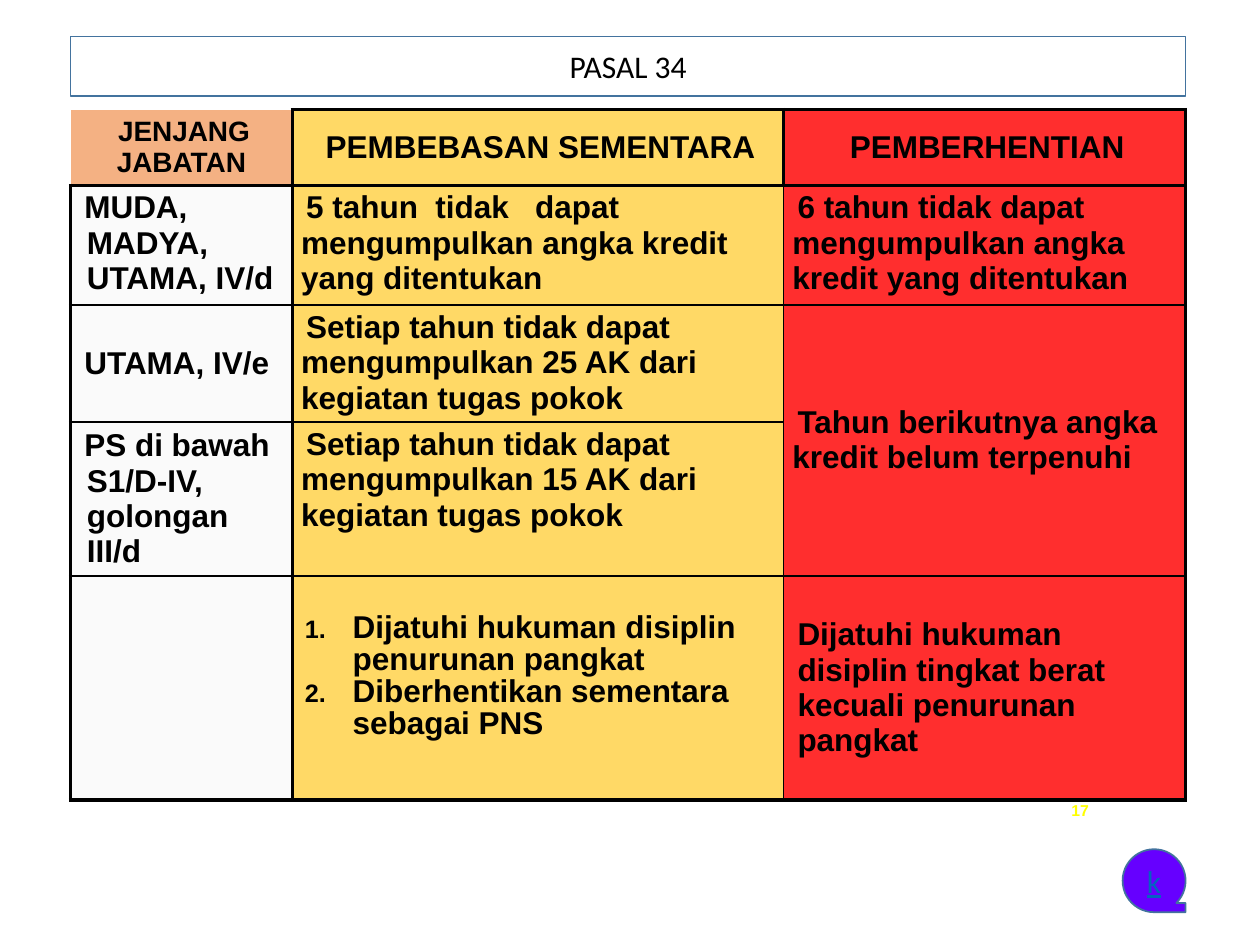
import pptx
import pptx.util
import pptx.dml.color
import pptx.enum.shapes
import pptx.enum.text
import pptx.oxml.ns
import lxml.etree

Inches, Pt = pptx.util.Inches, pptx.util.Pt
ALIGN = pptx.enum.text.PP_ALIGN
ANCHOR = pptx.enum.text.MSO_ANCHOR
SHAPES = pptx.enum.shapes.MSO_SHAPE
rgb = pptx.dml.color.RGBColor.from_string
qn = pptx.oxml.ns.qn

COLORS = {
    "text": "000000", "white": "FFFFFF", "outline": "43739E", "header": "F4B183",
    "level": "FAFAFA", "suspension": "FFD966", "dismissal": "FF0000",
    "number": "FFFF00", "tape": "6600FF", "letter": "0563C1",
}
THICK, THIN = 2.25, 1


def write(frame, *lines, size=18, font="Arial", bold=True, color="text", underline=None,
          align=ALIGN.LEFT, left=0, indent=0, spacing=None, numbered=False):
    """Write each line as a paragraph; left and indent are in inches."""
    for index, line in enumerate(lines):
        paragraph = frame.paragraphs[0] if index == 0 else frame.add_paragraph()
        paragraph.alignment = align
        if spacing:
            paragraph.line_spacing = spacing
        properties = paragraph._p.get_or_add_pPr()
        properties.set("marL", str(Inches(left)))
        properties.set("indent", str(Inches(indent)))
        if numbered:
            lxml.etree.SubElement(properties, qn("a:buSzPct"), val="80000")
            lxml.etree.SubElement(properties, qn("a:buAutoNum"), type="arabicPeriod")
        run = paragraph.add_run()
        run.text = line
        run.font.size, run.font.name = Pt(size), font
        run.font.bold, run.font.underline = bold, underline
        run.font.color.rgb = rgb(COLORS[color])


def set_borders(cell, widths):
    """Set left, right, top and bottom border widths in points; 0 means none."""
    properties = cell._tc.get_or_add_tcPr()
    for position, (side, width) in enumerate(zip("LRTB", widths)):
        border = lxml.etree.Element(qn(f"a:ln{side}"), w=str(Pt(width)))
        properties.insert(position, border)
        if width:
            fill = lxml.etree.SubElement(border, qn("a:solidFill"))
            lxml.etree.SubElement(fill, qn("a:srgbClr"), val=COLORS["text"])
        else:
            lxml.etree.SubElement(border, qn("a:noFill"))


presentation = pptx.Presentation()
presentation.slide_width, presentation.slide_height = Inches(10), Inches(7.5)
slide = presentation.slides.add_slide(presentation.slide_layouts[5])

# Grid
column_widths = [1.76, 3.9, 3.19]
row_heights = [0.6, 0.95, 0.93, 1.22, 1.78]
left, top, width = 0.56, 0.87, sum(column_widths)

# Title
title = slide.shapes.title
title.left, title.top = Inches(left), Inches(0.29)
title.width, title.height = Inches(width), Inches(0.47)
title.fill.solid()
title.fill.fore_color.rgb = rgb(COLORS["white"])
title.line.color.rgb, title.line.width = rgb(COLORS["outline"]), Pt(1)
title.text_frame.vertical_anchor = ANCHOR.MIDDLE
write(title.text_frame, "PASAL 34", font="Calibri", bold=False, align=ALIGN.CENTER)

# Table frame
table = slide.shapes.add_table(
    len(row_heights), len(column_widths), Inches(left), Inches(top),
    Inches(width), Inches(sum(row_heights))).table
table.first_row = table.horz_banding = False
for column, column_width in zip(table.columns, column_widths):
    column.width = Inches(column_width)
for row, row_height in zip(table.rows, row_heights):
    row.height = Inches(row_height)

# Fills, margins and borders: outer edges and header are thick
vertical_edges = [THICK, THICK, THIN, THICK]
horizontal_edges = [THICK, THICK, THIN, THIN, THIN, THICK]
for row in range(len(row_heights)):
    for column, fill_name in enumerate(["level", "suspension", "dismissal"]):
        cell = table.cell(row, column)
        corner = row == column == 0
        cell.fill.solid()
        cell.fill.fore_color.rgb = rgb(COLORS["header" if corner else fill_name])
        if fill_name == "dismissal":
            color = cell._tc.tcPr.find(".//" + qn("a:srgbClr"))
            lxml.etree.SubElement(color, qn("a:alpha"), val="82000")
        cell.margin_left = cell.margin_right = Inches(0.07)
        cell.margin_top = cell.margin_bottom = Inches(0.04)
        edges = [THICK] * 4 if row == 0 else vertical_edges
        set_borders(cell, [0 if corner else edges[column], edges[column + 1],
                           0 if corner else horizontal_edges[row], horizontal_edges[row + 1]])
table.cell(2, 2).merge(table.cell(3, 2))

# Table text: row, column, anchor, text, format
first_line = {"indent": 0.04}
hanging = {"left": 0.06, "indent": -0.02}
heading = {"indent": 0.04, "align": ALIGN.CENTER}
contents = [
    (0, 0, ANCHOR.MIDDLE, "JENJANG JABATAN", {**heading, "size": 16}),
    (0, 1, ANCHOR.MIDDLE, "PEMBEBASAN SEMENTARA", heading),
    (0, 2, ANCHOR.MIDDLE, "PEMBERHENTIAN", heading),
    (1, 0, ANCHOR.TOP, "MUDA, MADYA, UTAMA, IV/d", hanging),
    (1, 1, ANCHOR.TOP, "5 tahun  tidak   dapat mengumpulkan angka kredit yang ditentukan", first_line),
    (1, 2, ANCHOR.TOP, "6 tahun tidak dapat mengumpulkan angka kredit yang ditentukan", first_line),
    (2, 0, ANCHOR.MIDDLE, "UTAMA, IV/e", first_line),
    (2, 1, ANCHOR.TOP, "Setiap tahun tidak dapat mengumpulkan 25 AK dari kegiatan tugas pokok", first_line),
    (2, 2, ANCHOR.MIDDLE, "Tahun berikutnya angka kredit belum terpenuhi", first_line),
    (3, 0, ANCHOR.MIDDLE, "PS di bawah S1/D-IV, golongan III/d", hanging),
    (3, 1, ANCHOR.TOP, "Setiap tahun tidak dapat mengumpulkan 15 AK dari kegiatan tugas pokok", first_line),
    (4, 2, ANCHOR.MIDDLE, "Dijatuhi hukuman disiplin tingkat berat kecuali penurunan pangkat", {"left": 0.04}),
]
for row, column, anchor, text, text_format in contents:
    cell = table.cell(row, column)
    cell.vertical_anchor = anchor
    write(cell.text_frame, text, **text_format)

# Numbered reasons for suspension
reasons = table.cell(4, 1)
reasons.margin_top = Inches(0.3)
write(reasons.text_frame, "Dijatuhi hukuman disiplin penurunan pangkat",
      "Diberhentikan sementara sebagai PNS",
      left=0.41, indent=-0.38, spacing=0.9, numbered=True)

# Slide number
number = slide.shapes.add_textbox(Inches(8.38), Inches(6.31), Inches(0.36), Inches(0.23))
number.text_frame.word_wrap = True
write(number.text_frame, "17", size=9, color="number", align=ALIGN.RIGHT)

# Tape button, flush with the table's right edge
button_size = 0.5
button = slide.shapes.add_shape(
    SHAPES.FLOWCHART_SEQUENTIAL_ACCESS_STORAGE, Inches(left + width - button_size),
    Inches(6.74), Inches(button_size), Inches(button_size))
button.shadow.inherit = False
button.fill.solid()
button.fill.fore_color.rgb = rgb(COLORS["tape"])
button.line.color.rgb, button.line.width = rgb(COLORS["outline"]), Pt(1)
button.text_frame.vertical_anchor = ANCHOR.MIDDLE
button.text_frame.word_wrap = False
write(button.text_frame, "k", font="Calibri", bold=False, color="letter",
      underline=True, align=ALIGN.CENTER)

presentation.save("out.pptx")
